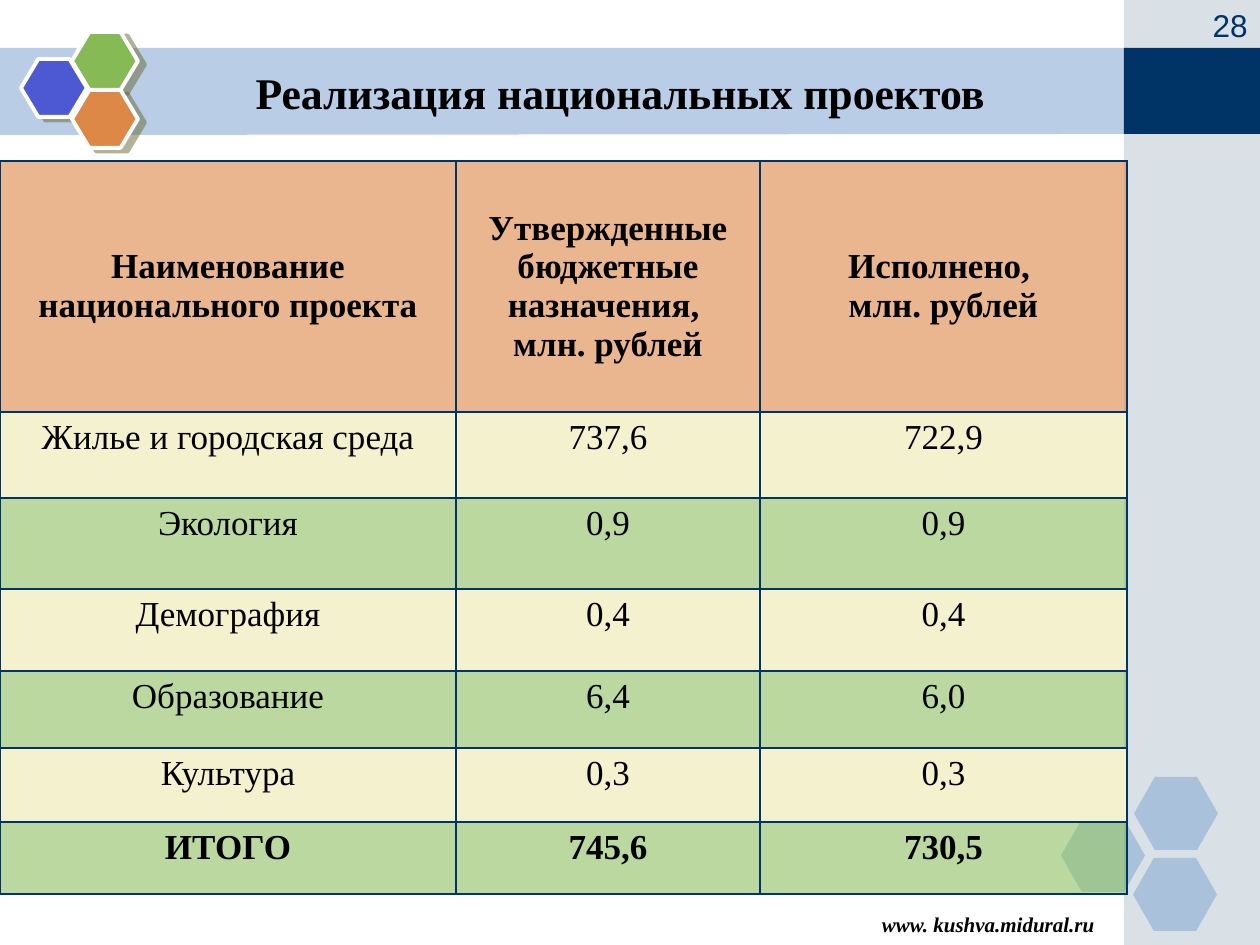
from dataclasses import dataclass

import pptx
import pptx.dml.color
import pptx.enum.shapes
import pptx.enum.text
import pptx.oxml
import pptx.oxml.ns
import pptx.util

EMU_PER_PX = 914400 / 126
SHAPE = pptx.enum.shapes.MSO_SHAPE
ALIGN = pptx.enum.text.PP_ALIGN
ANCHOR = pptx.enum.text.MSO_ANCHOR


@dataclass(frozen=True)
class Theme:
    serif: str = "Times New Roman"
    sans: str = "Arial"
    ink: str = "000000"
    navy: str = "003366"
    white: str = "FFFFFF"
    band: str = "B9CEE6"
    side: str = "A0B5C4"
    pale_hexagon: str = "5086C2"
    blue: str = "4C59D2"
    green: str = "85BA54"
    orange: str = "DE8848"
    cream: str = "F4F1CE"
    shadow: str = "666633"
    title_size: int = 25
    table_size: int = 20
    number_size: int = 18
    address_size: int = 12


THEME = Theme()

COLUMN_WIDTHS = [456, 304, 367]
ROW_HEIGHTS = [251, 86, 91, 82, 77, 74, 72]
ROWS = [
    ["Наименование национального проекта",
     "Утвержденные бюджетные назначения, \nмлн. рублей",
     "Исполнено, \nмлн. рублей"],
    ["Жилье и городская среда", "737,6", "722,9"],
    ["Экология", "0,9", "0,9"],
    ["Демография", "0,4", "0,4"],
    ["Образование", "6,4", "6,0"],
    ["Культура", "0,3", "0,3"],
    ["ИТОГО", "745,6", "730,5"],
]


def px(n):
    return pptx.util.Emu(round(n * EMU_PER_PX))


def rgb(color):
    return pptx.dml.color.RGBColor.from_string(color)


def xml(text):
    return pptx.oxml.parse_xml(text.replace(">", f" {pptx.oxml.ns.nsdecls('a')}>", 1))


def set_fill(fill, properties, color, opacity=100):
    """Fill solidly; properties is the XML element that holds the fill."""
    fill.solid()
    fill.fore_color.rgb = rgb(color)
    if opacity < 100:
        clr = properties.find(pptx.oxml.ns.qn("a:solidFill"))[0]
        clr.append(xml(f'<a:alpha val="{opacity * 1000}"></a:alpha>'))


def style_shape(sp, color, opacity=100):
    set_fill(sp.fill, sp._element.spPr, color, opacity)
    sp.line.fill.background()
    sp.shadow.inherit = False
    return sp


def add_box(s, kind, box, color, opacity=100):
    return style_shape(s.shapes.add_shape(kind, *map(px, box)), color, opacity)


def add_title_band(s):
    builder = s.shapes.build_freeform(px(-1), px(48), scale=1.0)
    corners = [(1128, 48), (1128, 134), (-1, 135)]
    builder.add_line_segments([(px(x), px(y)) for x, y in corners], close=True)
    style_shape(builder.convert_to_shape(), THEME.band)


def add_pale_hexagon(s, left, top):
    sp = add_box(s, SHAPE.HEXAGON, (left, top, 84, 73), THEME.pale_hexagon, 35)
    sp.adjustments[0] = 0.286


def add_bright_hexagon(s, left, top, color):
    sp = add_box(s, SHAPE.HEXAGON, (left, top, 66, 58), color)
    sp.adjustments[0] = 0.3
    sp.line.color.rgb = rgb(THEME.white)
    sp.line.width = pptx.util.Pt(2.25)
    effects = sp._element.spPr.find(pptx.oxml.ns.qn("a:effectLst"))
    effects.append(xml(
        '<a:outerShdw blurRad="0" dist="57150" dir="1620000" rotWithShape="0">'
        f'<a:srgbClr val="{THEME.shadow}"><a:alpha val="50000"/></a:srgbClr>'
        '</a:outerShdw>'))


def write_text(tf, text, size, align, font=THEME.serif, color=THEME.ink,
               bold=False, italic=False):
    for i, line in enumerate(text.split("\n")):
        p = tf.add_paragraph() if i else tf.paragraphs[0]
        p.alignment = align
        r = p.add_run()
        r.text = line
        r.font.name = font
        r.font.size = pptx.util.Pt(size)
        r.font.bold = bold
        r.font.italic = italic
        r.font.color.rgb = rgb(color)


def add_text(s, box, text, size, align, anchor=ANCHOR.TOP, **style):
    tf = s.shapes.add_textbox(*map(px, box)).text_frame
    tf.word_wrap = True
    tf.vertical_anchor = anchor
    write_text(tf, text, size, align, **style)


def add_borders(cell):
    properties = cell._tc.get_or_add_tcPr()
    for side in "LRTB":
        properties.append(xml(
            f'<a:ln{side} w="12700"><a:solidFill><a:srgbClr val="{THEME.navy}"/>'
            f'</a:solidFill></a:ln{side}>'))


def row_fill(row):
    if row == 0:
        return THEME.orange, 61
    return (THEME.cream, 100) if row % 2 else (THEME.green, 56)


def add_projects_table(s):
    frame = s.shapes.add_table(
        len(ROWS), len(COLUMN_WIDTHS), px(0), px(161),
        px(sum(COLUMN_WIDTHS)), px(sum(ROW_HEIGHTS)))
    table = frame.table
    table.first_row = table.horz_banding = False
    for column, width in zip(table.columns, COLUMN_WIDTHS):
        column.width = px(width)
    for i, (values, height) in enumerate(zip(ROWS, ROW_HEIGHTS)):
        table.rows[i].height = px(height)
        for j, value in enumerate(values):
            cell = table.cell(i, j)
            add_borders(cell)
            set_fill(cell.fill, cell._tc.tcPr, *row_fill(i))
            cell.vertical_anchor = ANCHOR.TOP if i else ANCHOR.MIDDLE
            write_text(cell.text_frame, value, THEME.table_size, ALIGN.CENTER,
                       bold=i in (0, len(ROWS) - 1))


def main():
    prs = pptx.Presentation()
    prs.slide_width, prs.slide_height = px(1260), px(945)
    s = prs.slides.add_slide(prs.slide_layouts[6])

    add_title_band(s)
    add_box(s, SHAPE.RECTANGLE, (1124, 0, 136, 945), THEME.side, 40)
    add_box(s, SHAPE.RECTANGLE, (1124, 48, 136, 86), THEME.navy)
    for left, top in [(1061, 819), (1134, 777), (1133, 858)]:
        add_pale_hexagon(s, left, top)
    for left, top, color in [(21, 59, THEME.blue), (72, 32, THEME.green),
                             (72, 90, THEME.orange)]:
        add_bright_hexagon(s, left, top, color)

    add_text(s, (158, 53, 924, 78), "Реализация национальных проектов",
             THEME.title_size, ALIGN.CENTER, ANCHOR.MIDDLE, bold=True)
    add_text(s, (704, 905, 403, 20), "www. kushva.midural.ru",
             THEME.address_size, ALIGN.RIGHT, bold=True, italic=True)
    add_projects_table(s)
    add_text(s, (1177, 0, 83, 50), "28", THEME.number_size, ALIGN.RIGHT,
             font=THEME.sans, color=THEME.navy)
    prs.save("out.pptx")


if __name__ == "__main__":
    main()
